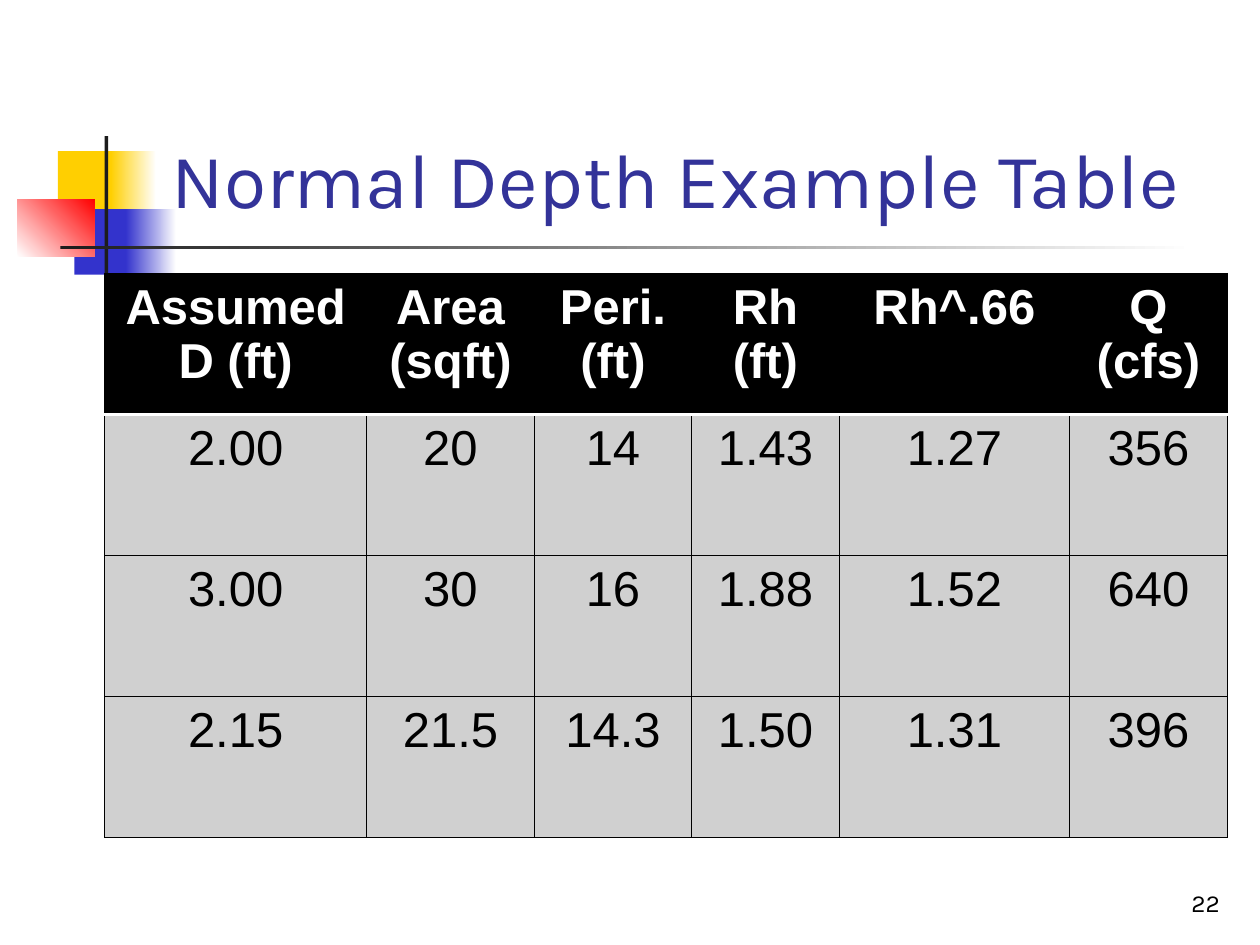
from lxml import etree
from pptx import Presentation
from pptx.dml.color import RGBColor
from pptx.enum import shapes, text
from pptx.oxml import ns
from pptx.util import Inches, Pt

TITLE = "Normal Depth Example Table"
PAGE = "22"
ROWS = [
    ("Assumed D (ft)", "Area (sqft)", "Peri. (ft)", "Rh (ft)", "Rh^.66", "Q (cfs)"),
    ("2.00", "20", "14", "1.43", "1.27", "356"),
    ("3.00", "30", "16", "1.88", "1.52", "640"),
    ("2.15", "21.5", "14.3", "1.50", "1.31", "396"),
]
COLUMN_WIDTHS = (2.08, 1.33, 1.25, 1.17, 1.83, 1.25)
ROW_HEIGHT = 1.12
TABLE_LEFT, TABLE_TOP = 0.83, 2.17

# Box, colours (two make a gradient), gradient angle
ORNAMENTS = [
    ((0.46, 1.2, 0.48, 0.52), ("FFCF01",), 0),
    ((0.88, 1.2, 0.36, 0.52), ("FFCF01", "FFFFFF"), 0),
    ((0.59, 1.66, 0.46, 0.52), ("3333CC",), 0),
    ((1, 1.66, 0.4, 0.52), ("3333CC", "FFFFFF"), 0),
    ((0.14, 1.58, 0.61, 0.46), ("FFFFFF", "FF0000"), 45),
    ((0.83, 1.08, 0.03, 1.15), ("1C1C1C",), 0),
    ((0.48, 1.95, 9, 0.03), ("1C1C1C", "FFFFFF"), 0),
]
TITLE_FONT = {"name": "Karla", "size": Pt(44), "color": "333399"}
PAGE_FONT = {"name": "Karla", "size": Pt(14), "color": "000000"}
HEAD_FONT = {"name": "Arial", "size": Pt(28), "bold": True, "color": "FFFFFF"}
BODY_FONT = {"name": "Arial", "size": Pt(28), "bold": False, "color": "000000"}


def paint(target, color):
    target.rgb = RGBColor.from_string(color)


def write(frame, words, font, align, anchor=None):
    if anchor is not None:
        frame.word_wrap = True
        frame.vertical_anchor = anchor
    paragraph = frame.paragraphs[0]
    paragraph.alignment = align
    run = paragraph.add_run()
    run.text = words
    for key, value in font.items():
        if key == "color":
            paint(run.font.color, value)
        else:
            setattr(run.font, key, value)


def add_ornament(slide, box, colors, angle):
    block = slide.shapes.add_shape(
        shapes.MSO_SHAPE.RECTANGLE, *(Inches(length) for length in box))
    block.shadow.inherit = False
    block.line.fill.background()
    if len(colors) == 1:
        block.fill.solid()
        paint(block.fill.fore_color, colors[0])
        return
    block.fill.gradient()
    block.fill.gradient_angle = angle
    for stop, position, color in zip(block.fill.gradient_stops, (0, 1), colors):
        stop.position = position
        paint(stop.color, color)


def set_borders(cell, borders):
    """Borders are (color, points) in the order left, right, top, bottom."""
    properties = cell._tc.get_or_add_tcPr()
    for index, (side, (color, points)) in enumerate(zip("LRTB", borders)):
        line = etree.Element(ns.qn(f"a:ln{side}"), w=str(Pt(points)))
        fill = etree.SubElement(line, ns.qn("a:solidFill"))
        etree.SubElement(fill, ns.qn("a:srgbClr"), val=color)
        properties.insert(index, line)


def add_depth_table(slide):
    table = slide.shapes.add_table(
        len(ROWS), len(COLUMN_WIDTHS), Inches(TABLE_LEFT), Inches(TABLE_TOP),
        Inches(sum(COLUMN_WIDTHS)), Inches(ROW_HEIGHT * len(ROWS))).table
    for column, width in zip(table.columns, COLUMN_WIDTHS):
        column.width = Inches(width)
    thin, divider = ("000000", 0.75), ("FFFFFF", 2)
    for r, values in enumerate(ROWS):
        table.rows[r].height = Inches(ROW_HEIGHT)
        for c, value in enumerate(values):
            cell = table.cell(r, c)
            write(cell.text_frame, value, BODY_FONT if r else HEAD_FONT,
                  text.PP_ALIGN.CENTER)
            cell.fill.solid()
            paint(cell.fill.fore_color, "D0D0D0" if r else "000000")
            set_borders(cell, (thin, thin, divider if r == 1 else thin,
                               divider if r == 0 else thin))


def main():
    deck = Presentation()
    deck.slide_width, deck.slide_height = Inches(10), Inches(7.5)
    slide = deck.slides.add_slide(deck.slide_layouts[5])
    for ornament in ORNAMENTS:
        add_ornament(slide, *ornament)

    page = slide.shapes.add_textbox(
        Inches(7.7), Inches(6.83), Inches(2.08), Inches(0.5))
    write(page.text_frame, PAGE, PAGE_FONT, text.PP_ALIGN.RIGHT,
          text.MSO_ANCHOR.BOTTOM)

    title = slide.shapes.title
    title.left, title.top = Inches(1.26), Inches(0.23)
    title.width, title.height = Inches(8.52), Inches(1.6)
    title.text_frame.auto_size = text.MSO_AUTO_SIZE.NONE
    write(title.text_frame, TITLE, TITLE_FONT, text.PP_ALIGN.LEFT,
          text.MSO_ANCHOR.BOTTOM)
    slide.shapes._spTree.append(title._element)  # in front of the ornaments

    add_depth_table(slide)
    deck.save("out.pptx")


if __name__ == "__main__":
    main()
